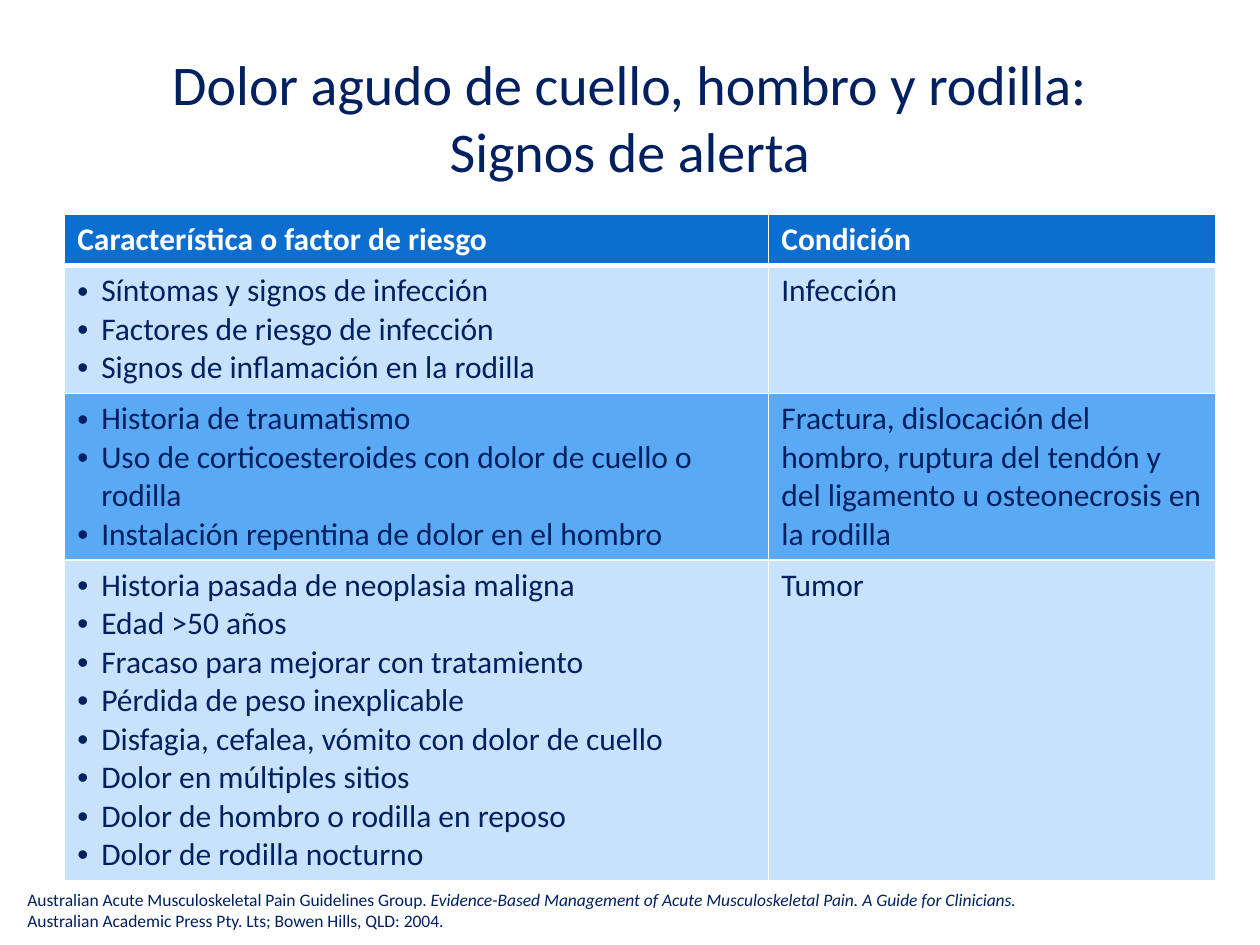
from copy import deepcopy

from lxml import etree
from pptx import Presentation
from pptx.dml.color import RGBColor
from pptx.enum.text import MSO_ANCHOR, MSO_AUTO_SIZE, PP_ALIGN
from pptx.oxml.ns import qn
from pptx.util import Pt

MIDDLE, CENTER = MSO_ANCHOR.MIDDLE, PP_ALIGN.CENTER
NO_FIT, GROW = MSO_AUTO_SIZE.NONE, MSO_AUTO_SIZE.SHAPE_TO_FIT_TEXT
NAVY, WHITE, HEADER_BLUE = "002060", "FFFFFF", "0C6FCF"
BAND_FILLS = ["C8E2FC", "5AA9F5"]
COLUMN_WIDTHS = [402.3, 255.6]
LINE_HEIGHT, CELL_PADDING, INDENT = 21.97, 7.2, 13.7

# Table rows: risk factors, condition, number of text lines
HEADINGS = ["Característica o factor de riesgo", "Condición"]
WARNING_SIGNS = [
    (["Síntomas y signos de infección",
      "Factores de riesgo de infección",
      "Signos de inflamación en la rodilla"],
     "Infección", 3),
    (["Historia de traumatismo",
      "Uso de corticoesteroides con dolor de cuello o rodilla",
      "Instalación repentina de dolor en el hombro"],
     "Fractura, dislocación del hombro, ruptura del tendón y del "
     "ligamento u osteonecrosis en la rodilla", 4),
    (["Historia pasada de neoplasia maligna",
      "Edad >50 años",
      "Fracaso para mejorar con tratamiento",
      "Pérdida de peso inexplicable",
      "Disfagia, cefalea, vómito con dolor de cuello",
      "Dolor en múltiples sitios",
      "Dolor de hombro o rodilla en reposo",
      "Dolor de rodilla nocturno"],
     "Tumor", 8),
]


def format_text(para, size, color, bold=False):
    for span in para.runs:
        span.font.name = "Calibri"
        span.font.size = Pt(size)
        span.font.bold = bold
        span.font.color.rgb = RGBColor.from_string(color)
    # Line breaks take the size of the text around them
    for line_break in para._p.findall(qn("a:br")):
        line_break.append(deepcopy(para.runs[0]._r.rPr))


def fill_cell(cell, lines, fill, color, header=False, bullets=False):
    cell.text_frame.text = "\n".join(lines)
    for para in cell.text_frame.paragraphs:
        if bullets:
            properties = para._p.get_or_add_pPr()
            properties.set("marL", str(Pt(INDENT)))
            properties.set("indent", str(Pt(-INDENT)))
            etree.SubElement(properties, qn("a:buFont"), typeface="Arial")
            etree.SubElement(properties, qn("a:buChar"), char="•")
        format_text(para, 18, color, header)
    # Borders come before the fill in the cell properties
    properties = cell._tc.get_or_add_tcPr()
    for side in ["lnL", "lnR", "lnT", "lnB"]:
        width = 3 if header and side == "lnB" else 1
        border = etree.SubElement(properties, qn("a:" + side), w=str(Pt(width)))
        solid = etree.SubElement(border, qn("a:solidFill"))
        etree.SubElement(solid, qn("a:srgbClr"), val=WHITE)
    cell.fill.solid()
    cell.fill.fore_color.rgb = RGBColor.from_string(fill)


deck = Presentation()
deck.slide_width, deck.slide_height = Pt(720), Pt(540)
page = deck.slides.add_slide(deck.slide_layouts[5])

# Title
title = page.shapes.title
title.left, title.top, title.width, title.height = Pt(36), Pt(21.6), Pt(648), Pt(90)
title.text_frame.auto_size = NO_FIT
title.text_frame.vertical_anchor = MIDDLE
para = title.text_frame.paragraphs[0]
para.text = "Dolor agudo de cuello, hombro y rodilla:\vSignos de alerta"
para.alignment = CENTER
format_text(para, 32, NAVY)

# Table of warning signs
row_heights = [CELL_PADDING + LINE_HEIGHT * count
               for count in [1] + [row[2] for row in WARNING_SIGNS]]
table = page.shapes.add_table(len(row_heights), 2, Pt(37), Pt(122.6),
                              Pt(sum(COLUMN_WIDTHS)), Pt(sum(row_heights))).table
for column, width in zip(table.columns, COLUMN_WIDTHS):
    column.width = Pt(width)
for row, height in zip(table.rows, row_heights):
    row.height = Pt(height)
for index, heading in enumerate(HEADINGS):
    fill_cell(table.cell(0, index), [heading], HEADER_BLUE, WHITE, header=True)
for index, (factors, condition, _) in enumerate(WARNING_SIGNS):
    fill = BAND_FILLS[index % 2]
    fill_cell(table.cell(index + 1, 0), factors, fill, NAVY, bullets=True)
    fill_cell(table.cell(index + 1, 1), [condition], fill, NAVY)

# Citation
box = page.shapes.add_textbox(Pt(8.6), Pt(504.7), Pt(629.3), Pt(31.7))
box.text_frame.word_wrap = True
box.text_frame.auto_size = GROW
para = box.text_frame.paragraphs[0]
para.add_run().text = "Australian Acute Musculoskeletal Pain Guidelines Group. "
book = para.add_run()
book.text = ("Evidence-Based Management of Acute Musculoskeletal Pain. "
             "A Guide for Clinicians. ")
para.add_line_break()
para.add_run().text = "Australian Academic Press Pty. Lts; Bowen Hills, QLD: 2004."
format_text(para, 10, NAVY)
book.font.italic = True

deck.save("out.pptx")
